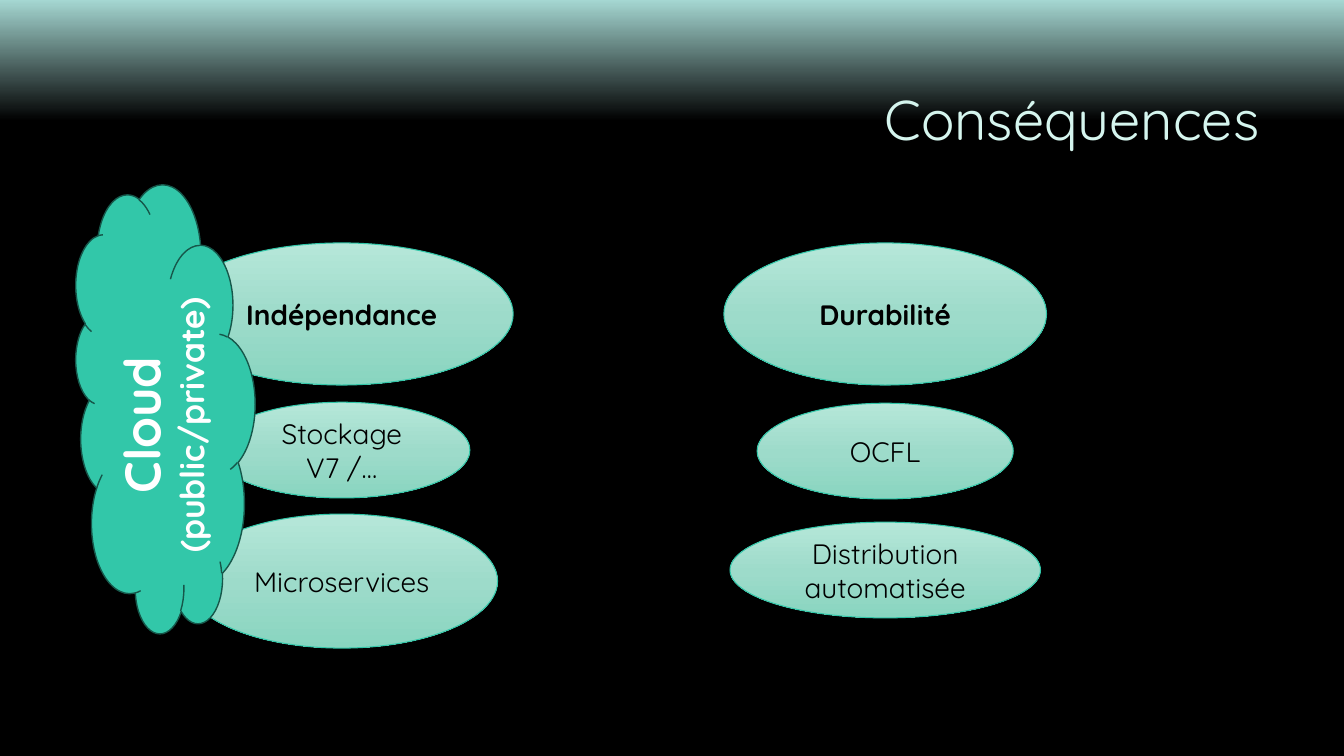
import copy
import pptx
import pptx.dml.color
import pptx.enum.shapes
import pptx.enum.text
import pptx.oxml.ns
import pptx.util

RGBColor = pptx.dml.color.RGBColor
Inches = pptx.util.Inches
Pt = pptx.util.Pt
Shapes = pptx.enum.shapes.MSO_SHAPE
Align = pptx.enum.text.PP_ALIGN
Anchor = pptx.enum.text.MSO_ANCHOR

BLACK = RGBColor(0x00, 0x00, 0x00)
WHITE = RGBColor(0xFF, 0xFF, 0xFF)
MINT = RGBColor(0xD5, 0xF5, 0xEE)
TEAL = RGBColor(0x32, 0xC7, 0xA9)
DARK_TEAL = RGBColor(0x16, 0x57, 0x4A)
SKY = [(0, RGBColor(0xA5, 0xD7, 0xD2)), (16, BLACK), (100, BLACK)]
BUBBLE = [
    (0, RGBColor(0xB6, 0xE7, 0xD9)),
    (52, RGBColor(0x9D, 0xDB, 0xCA)),
    (100, RGBColor(0x89, 0xD5, 0xC0)),
]

FONT = "Quicksand"
TITLE = "Conséquences"
CLOUD_RUNS = [("Cloud ", 36), ("(public/private)", 24)]
COLUMNS = [
    (3.39, [
        ("Indépendance", 2.41, 3.4, 1.41),
        ("Stockage V7 /…", 3.99, 2.54, 0.95),
        ("Microservices", 5.1, 3.09, 1.33),
    ]),
    (8.78, [
        ("Durabilité", 2.41, 3.2, 1.41),
        ("OCFL", 4, 2.54, 0.95),
        ("Distribution automatisée", 5.18, 3.08, 0.95),
    ]),
]


def set_gradient(fill, element, stops):
    fill.gradient()
    fill.gradient_angle = 270
    stop_list = next(element.iter(pptx.oxml.ns.qn("a:gsLst")))
    stop_list.insert(1, copy.deepcopy(stop_list[0]))
    for stop, (position, color) in zip(fill.gradient_stops, stops):
        stop.position = position / 100
        stop.color.rgb = color


def style_run(run, size, color, bold=False):
    run.font.name = FONT
    run.font.size = Pt(size)
    run.font.color.rgb = color
    run.font.bold = bold


def add_shape(slide, kind, box, line_color, line_width):
    shape = slide.shapes.add_shape(kind, *map(Inches, box))
    shape.shadow.inherit = False
    shape.line.color.rgb = line_color
    shape.line.width = Pt(line_width)
    frame = shape.text_frame
    frame.word_wrap = True
    frame.vertical_anchor = Anchor.MIDDLE
    frame.paragraphs[0].alignment = Align.CENTER
    return shape


def add_title(slide):
    title = slide.shapes.title
    title.left, title.top, title.width, title.height = map(Inches, (3.17, 0.51, 9.42, 1.41))
    title.text_frame.text = TITLE
    title.text_frame.vertical_anchor = Anchor.MIDDLE
    paragraph = title.text_frame.paragraphs[0]
    paragraph.alignment = Align.RIGHT
    paragraph.line_spacing = 0.9
    style_run(paragraph.runs[0], 40, MINT)


def add_bubbles(slide):
    for center, bubbles in COLUMNS:
        for row, (label, top, width, height) in enumerate(bubbles):
            box = (center - width / 2, top, width, height)
            bubble = add_shape(slide, Shapes.OVAL, box, TEAL, 0.75)
            set_gradient(bubble.fill, bubble._element, BUBBLE)
            paragraph = bubble.text_frame.paragraphs[0]
            paragraph.text = label
            style_run(paragraph.runs[0], 20, BLACK, bold=row == 0)


def add_cloud(slide):
    cloud = add_shape(slide, Shapes.CLOUD, (-0.59, 3.17, 4.45, 1.78), DARK_TEAL, 1)
    cloud.rotation = 270
    cloud.fill.solid()
    cloud.fill.fore_color.rgb = TEAL
    for text, size in CLOUD_RUNS:
        run = cloud.text_frame.paragraphs[0].add_run()
        run.text = text
        style_run(run, size, WHITE, bold=True)


def main():
    presentation = pptx.Presentation()
    presentation.slide_width = Inches(13.33)
    presentation.slide_height = Inches(7.5)
    slide = presentation.slides.add_slide(presentation.slide_layouts[5])
    set_gradient(slide.background.fill, slide._element, SKY)
    add_title(slide)
    add_bubbles(slide)
    add_cloud(slide)
    presentation.save("out.pptx")


if __name__ == "__main__":
    main()
